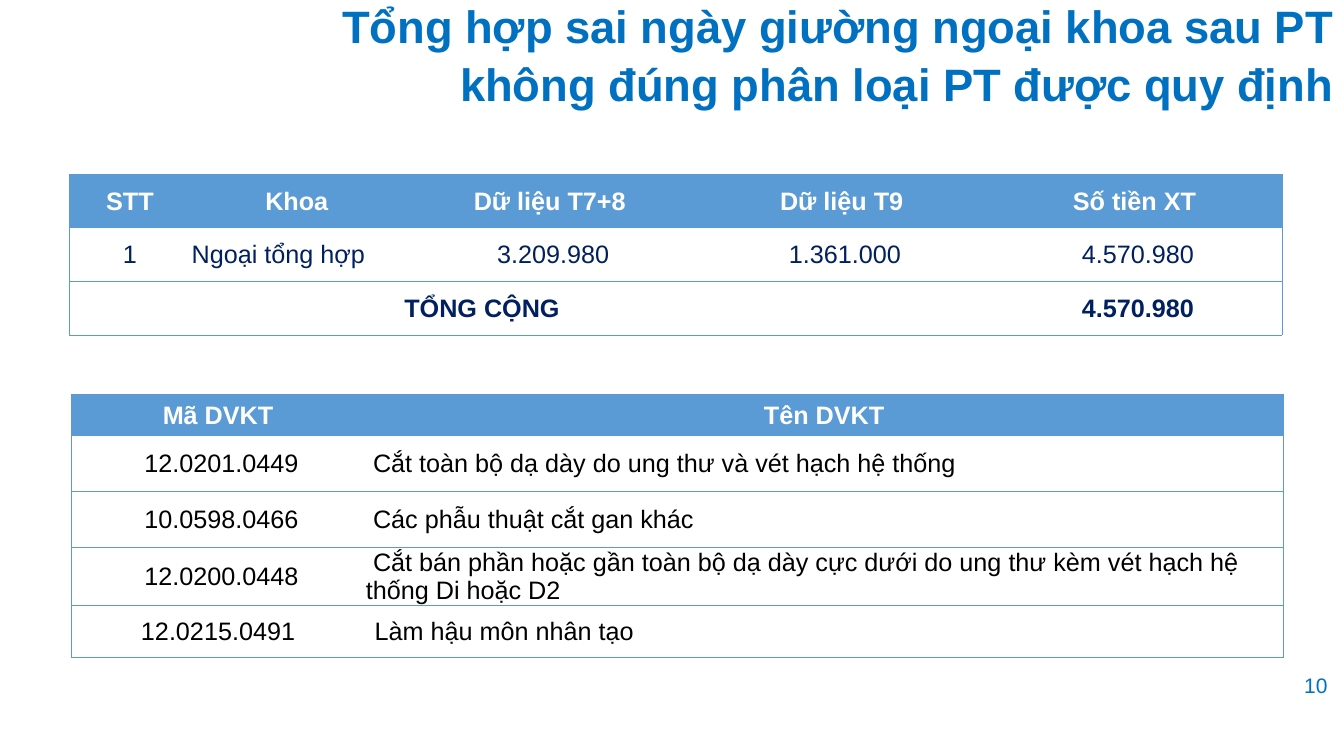
"""Build the slide on surgical bed-day errors, with a totals table and a service table."""
import pptx
import pptx.util
import pptx.dml.color
import pptx.enum.text
import pptx.oxml
import pptx.oxml.ns

Cm, Pt = pptx.util.Cm, pptx.util.Pt
ALIGN = pptx.enum.text.PP_ALIGN
ANCHOR = pptx.enum.text.MSO_ANCHOR

COLORS = {"title": "0070C0", "line": "5B9BD5", "header": "FFFFFF",
          "navy": "002060", "black": "000000"}
FONT = "Arial"
TITLE = "Tổng hợp sai ngày giường ngoại khoa sau PT không đúng phân loại PT được quy định"
PAGE = "10"

# style: alignment, left margin, right margin, first-line indent (cm)
STYLES = {
    "center": (ALIGN.CENTER, 0.25, 0.25, 0),
    "code": (ALIGN.CENTER, 0.2, 0.03, 0),
    "left": (ALIGN.LEFT, 0.03, 0.03, 0),
    "item": (ALIGN.LEFT, 0.03, 0.03, 0.18),
    "inset": (ALIGN.LEFT, 0.25, 0.25, 0),
}

TABLES = [
    {
        "at": (1.75, 4.39),
        "cols": [3.05, 5.36, 7.39, 7.32, 7.44],
        "heights": [1.35] * 3,
        "color": "navy",
        "bold_rows": {0, 2},
        "rows": [
            ["STT", "Khoa", "Dữ liệu T7+8", "Dữ liệu T9", "Số tiền XT"],
            ["1", "Ngoại tổng hợp", "3.209.980", "1.361.000", "4.570.980"],
            ["", "", "TỔNG CỘNG", "", "4.570.980"],
        ],
        "styles": [
            ["center"] * 5,
            ["center", "left", "code", "code", "code"],
            ["center", "center", "left", "center", "code"],
        ],
    },
    {
        "at": (1.8, 9.93),
        "cols": [7.39, 23.16],
        "heights": [1.04, 1.42, 1.4, 1.42, 1.33],
        "color": "black",
        "bold_rows": {0},
        "rows": [
            ["Mã DVKT", "Tên DVKT"],
            ["12.0201.0449", "Cắt toàn bộ dạ dày do ung thư và vét hạch hệ thống"],
            ["10.0598.0466", "Các phẫu thuật cắt gan khác"],
            ["12.0200.0448", "Cắt bán phần hoặc gần toàn bộ dạ dày cực dưới do ung thư "
                             "kèm vét hạch hệ thống Di hoặc D2"],
            ["12.0215.0491", "Làm hậu môn nhân tạo"],
        ],
        "styles": [["center"] * 2] + [["code", "item"]] * 3 + [["center", "inset"]],
    },
]


def rgb(name):
    return pptx.dml.color.RGBColor.from_string(COLORS[name])


def set_font(p, size, color, bold=False):
    p.font.name, p.font.size, p.font.bold = FONT, Pt(size), bold
    p.font.color.rgb = rgb(color)


def set_borders(cell, sides):
    tc_pr = cell._tc.get_or_add_tcPr()
    for i, side in enumerate("LRTB"):
        fill = (f'<a:solidFill><a:srgbClr val="{COLORS["line"]}"/></a:solidFill>'
                if side in sides else "<a:noFill/>")
        tc_pr.insert(i, pptx.oxml.parse_xml(
            f'<a:ln{side} {pptx.oxml.ns.nsdecls("a")} w="{Pt(0.5)}">{fill}</a:ln{side}>'))


def add_table(slide, spec):
    cols, heights = spec["cols"], spec["heights"]
    left, top = spec["at"]
    table = slide.shapes.add_table(len(heights), len(cols), Cm(left), Cm(top),
                                   Cm(sum(cols)), Cm(sum(heights))).table
    table.horz_banding = False
    for column, width in zip(table.columns, cols):
        column.width = Cm(width)
    for r, height in enumerate(heights):
        table.rows[r].height = Cm(height)
        for c, text in enumerate(spec["rows"][r]):
            cell = table.cell(r, c)
            align, margin_left, margin_right, indent = STYLES[spec["styles"][r][c]]
            cell.margin_left, cell.margin_right = Cm(margin_left), Cm(margin_right)
            cell.margin_top, cell.margin_bottom = Cm(0.03), 0
            cell.vertical_anchor = ANCHOR.MIDDLE
            if r == 0:
                cell.fill.solid()
                cell.fill.fore_color.rgb = rgb("line")
            else:
                cell.fill.background()
            set_borders(cell, "TB" + "L" * (c == 0) + "R" * (c == len(cols) - 1))
            p = cell.text_frame.paragraphs[0]
            p.text, p.alignment = text, align
            if indent:
                p._p.get_or_add_pPr().set("indent", str(Cm(indent)))
            set_font(p, 18, "header" if r == 0 else spec["color"], r in spec["bold_rows"])


def main():
    prs = pptx.Presentation()
    prs.slide_width, prs.slide_height = Cm(33.87), Cm(19.05)
    slide = prs.slides.add_slide(prs.slide_layouts[5])

    title = slide.shapes.title
    title.left, title.top, title.width, title.height = Cm(6.9), Cm(-0.25), Cm(26.97), Cm(2.95)
    tf = title.text_frame
    tf.text, tf.word_wrap, tf.vertical_anchor = TITLE, True, ANCHOR.TOP
    tf.auto_size = pptx.enum.text.MSO_AUTO_SIZE.NONE
    p = tf.paragraphs[0]
    p.alignment, p.line_spacing = ALIGN.RIGHT, 1.06
    set_font(p, 32.4, "title", True)

    for spec in TABLES:
        add_table(slide, spec)

    tf = slide.shapes.add_textbox(Cm(32.46), Cm(16.76), Cm(1.4), Cm(1)).text_frame
    tf.text, tf.word_wrap, tf.vertical_anchor = PAGE, True, ANCHOR.MIDDLE
    tf.paragraphs[0].alignment = ALIGN.CENTER
    set_font(tf.paragraphs[0], 15, "title")

    prs.save("out.pptx")


if __name__ == "__main__":
    main()
